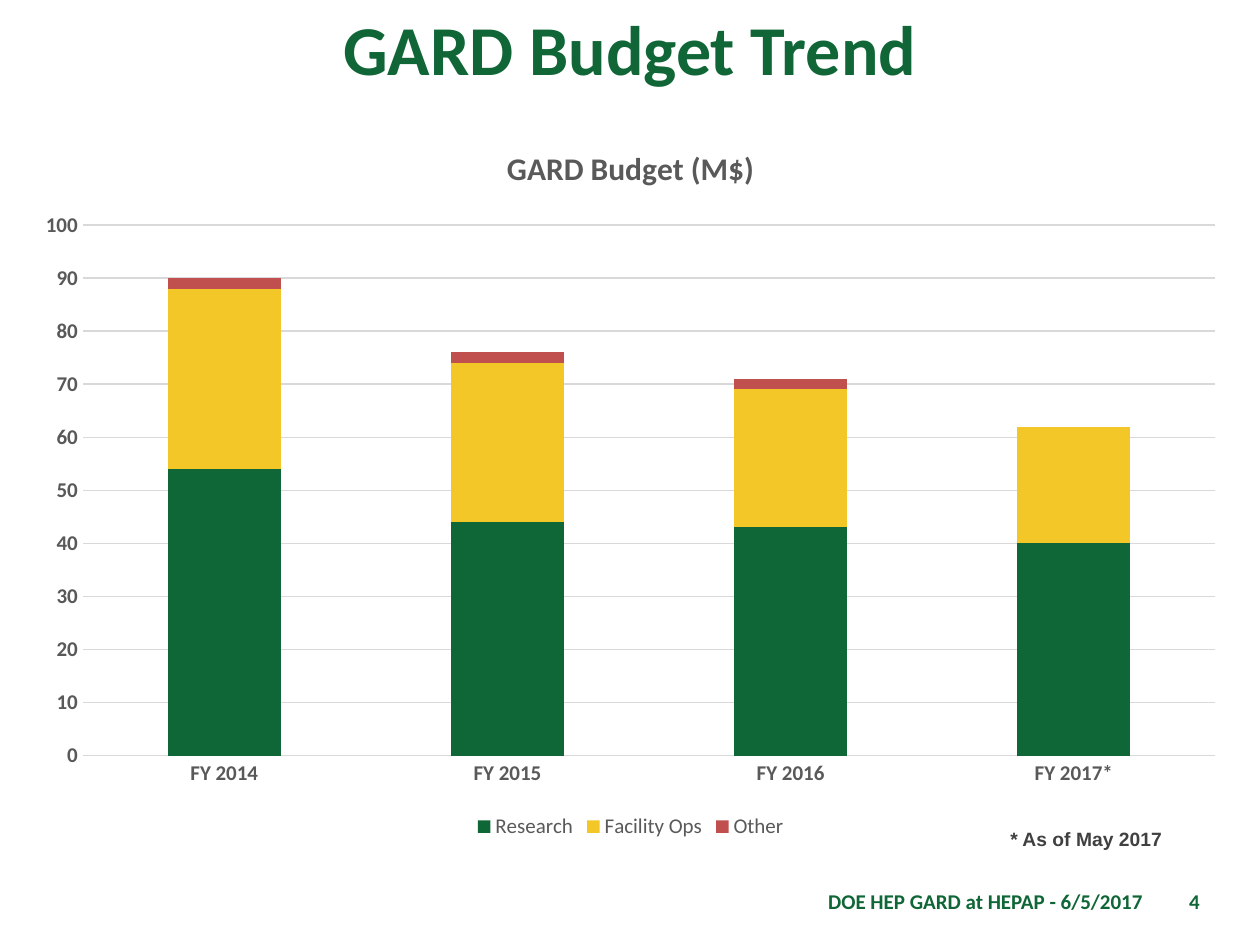
from pptx import Presentation
from pptx.chart.data import CategoryChartData
from pptx.dml.color import RGBColor
from pptx.enum.chart import XL_CHART_TYPE, XL_LEGEND_POSITION, XL_TICK_MARK
from pptx.enum.text import MSO_ANCHOR, PP_ALIGN
from pptx.util import Inches, Pt

STACKED = XL_CHART_TYPE.COLUMN_STACKED
BOTTOM = XL_LEGEND_POSITION.BOTTOM
NO_TICK = XL_TICK_MARK.NONE
MIDDLE, TOP = MSO_ANCHOR.MIDDLE, MSO_ANCHOR.TOP
LEFT, CENTER, RIGHT = PP_ALIGN.LEFT, PP_ALIGN.CENTER, PP_ALIGN.RIGHT

COLORS = {
    "title": "106636",
    "green": "0F6636",
    "yellow": "F3C727",
    "red": "C0504D",
    "label": "595959",
    "grid": "D9D9D9",
    "note": "404040",
}

# text, (left, top, width, height), size, font, color, alignment, anchor, wrap
TITLE = ("GARD Budget Trend", (0, 0, 10, 0.75), 40, "Calibri", "title", CENTER, MIDDLE, True)
PAGE_NUMBER = ("4", (9.2, 6.95, 0.42, 0.4), 12, "Calibri", "green", RIGHT, MIDDLE, True)
FOOTER = ("DOE HEP GARD at HEPAP - 6/5/2017", (3.42, 6.95, 5.75, 0.4), 12, "Calibri",
          "green", RIGHT, MIDDLE, True)
NOTE = ("* As of May 2017", (7.92, 6.52, 1.42, 0.29), 11, "Arial", "note", LEFT, TOP, False)

CHART_TITLE = "GARD Budget (M$)"
CHART_BOX = (0.17, 0.95, 9.67, 5.75)
YEARS = ["FY 2014", "FY 2015", "FY 2016", "FY 2017*"]
BUDGET = [
    ("Research", (54, 44, 43, 40), "green"),
    ("Facility Ops", (34, 30, 26, 22), "yellow"),
    ("Other", (2, 2, 2, 0), "red"),
]


def rgb(name):
    return RGBColor.from_string(COLORS[name])


def style_font(font, size, color, bold=True, name="Calibri"):
    font.size = Pt(size)
    font.name = name
    font.bold = bold
    font.color.rgb = rgb(color)


def style_line(line, color):
    line.color.rgb = rgb(color)
    line.width = Pt(0.75)


def add_text(slide, text, box, size, font_name, color, alignment, anchor, wrap):
    shape = slide.shapes.add_textbox(*map(Inches, box))
    frame = shape.text_frame
    frame.word_wrap = wrap
    frame.vertical_anchor = anchor
    frame.text = text
    paragraph = frame.paragraphs[0]
    paragraph.alignment = alignment
    style_font(paragraph.runs[0].font, size, color, name=font_name)


def add_budget_chart(slide):
    data = CategoryChartData()
    data.categories = YEARS
    for name, values, _ in BUDGET:
        data.add_series(name, values)
    chart = slide.shapes.add_chart(STACKED, *map(Inches, CHART_BOX), data).chart
    chart.font.size = Pt(10)
    chart.font.name = "Calibri"

    chart.has_title = True
    title_frame = chart.chart_title.text_frame
    title_frame.text = CHART_TITLE
    style_font(title_frame.paragraphs[0].runs[0].font, 18, "label")
    chart.chart_title.include_in_layout = False

    chart.has_legend = True
    chart.legend.position = BOTTOM
    chart.legend.include_in_layout = False
    style_font(chart.legend.font, 12, "label", bold=False)

    for axis in (chart.category_axis, chart.value_axis):
        axis.major_tick_mark = axis.minor_tick_mark = NO_TICK
        style_font(axis.tick_labels.font, 12, "label")
    style_line(chart.category_axis.format.line, "grid")
    value_axis = chart.value_axis
    value_axis.format.line.fill.background()
    value_axis.minimum_scale, value_axis.maximum_scale = 0, 100
    value_axis.major_unit = 10
    style_line(value_axis.major_gridlines.format.line, "grid")

    plot = chart.plots[0]
    plot.gap_width = 150
    plot.overlap = 100
    plot.vary_by_categories = False
    for series, (_, _, color) in zip(plot.series, BUDGET):
        series.format.fill.solid()
        series.format.fill.fore_color.rgb = rgb(color)


def main():
    presentation = Presentation()
    presentation.slide_width = Inches(10)
    presentation.slide_height = Inches(7.5)
    slide = presentation.slides.add_slide(presentation.slide_layouts[6])
    for item in (TITLE, PAGE_NUMBER, FOOTER):
        add_text(slide, *item)
    add_budget_chart(slide)
    add_text(slide, *NOTE)
    presentation.save("out.pptx")


if __name__ == "__main__":
    main()
